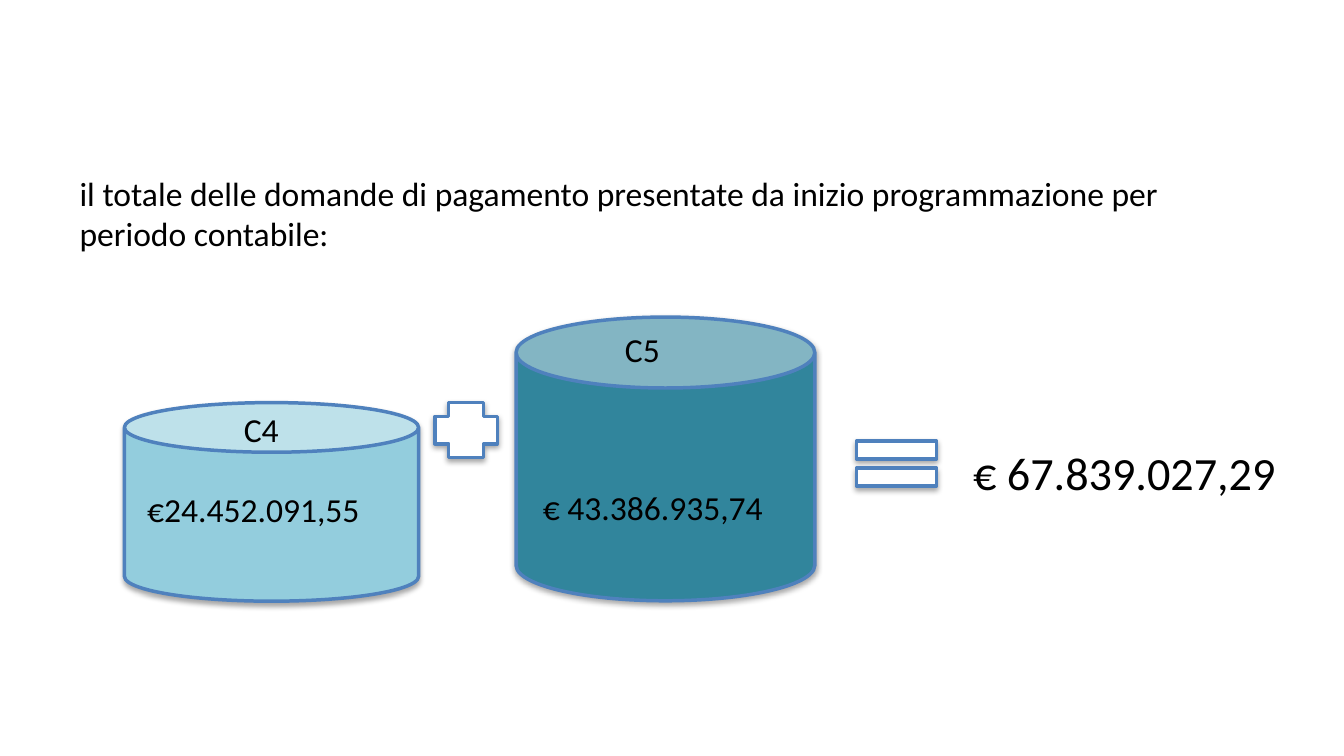
"""Build the slide that adds the C4 and C5 payment claims to their total."""
from lxml import etree
from pptx import Presentation
from pptx import util as u
from pptx.dml.color import RGBColor
from pptx.enum import shapes, text
from pptx.oxml.ns import qn

COLOURS = {"light": "93CDDD", "dark": "31859C", "edge": "4F81BD",
           "white": "FFFFFF", "ink": "000000"}
KINDS = shapes.MSO_SHAPE
PAGE_SIZE = (67.74, 38.1)
INSET = 0.33
EDGE_WIDTH = 5
SHADOW = {"blurRad": u.Pt(8), "dist": u.Pt(4), "dir": 90 * 60000, "rotWithShape": 0}
SHADOW_ALPHA = 35000

FIGURES = [
    (KINDS.CAN, "light", (6.27, 20.29, 14.83, 10.01)),
    (KINDS.CAN, "dark", (26.01, 15.98, 15.06, 14.3)),
    (KINDS.CROSS, "white", (21.92, 20.29, 3.15, 2.77)),
    (KINDS.MATH_EQUAL, "white", (42.44, 21.44, 5.49, 3.84)),
]
LABELS = [
    ("il totale delle domande di pagamento presentate da inizio programmazione "
     "per periodo contabile:", 48, (3.68, 8.36, 59.97, 29.41)),
    ("C4", 48, (11.96, 20.29, 9.17, 2.74)),
    ("€24.452.091,55", 48, (7.09, 24.33, 13.23, 2.74)),
    ("C5", 48, (31.17, 16.23, 9.17, 2.74)),
    ("€ 43.386.935,74", 48, (27.03, 24.23, 13.23, 2.74)),
    ("€ 67.839.027,29", 66, (48.72, 22.07, 16.92, 3.51)),
]


def colour(name):
    return RGBColor.from_string(COLOURS[name])


def apply(target, values):
    for name, value in values.items():
        setattr(target, name, value)


def add_shadow(shape):
    shape.shadow.inherit = False
    effects = shape._element.spPr.find(qn("a:effectLst"))
    shadow = etree.SubElement(effects, qn("a:outerShdw"),
                              {name: str(value) for name, value in SHADOW.items()})
    tint = etree.SubElement(shadow, qn("a:srgbClr"), val=COLOURS["ink"])
    etree.SubElement(tint, qn("a:alpha"), val=str(SHADOW_ALPHA))


def add_figure(page, kind, fill, place):
    shape = page.shapes.add_shape(kind, *map(u.Cm, place))
    shape.fill.solid()
    shape.fill.fore_color.rgb = colour(fill)
    shape.line.color.rgb = colour("edge")
    shape.line.width = u.Pt(EDGE_WIDTH)
    add_shadow(shape)


def add_label(page, words, size, place):
    box = page.shapes.add_textbox(*map(u.Cm, place))
    frame = box.text_frame
    apply(frame, {"word_wrap": True, "vertical_anchor": text.MSO_ANCHOR.TOP})
    apply(frame, {f"margin_{side}": u.Cm(INSET)
                  for side in ("left", "top", "right", "bottom")})
    span = frame.paragraphs[0].add_run()
    span.text = words
    apply(span.font, {"name": "Calibri", "size": u.Pt(size)})
    span.font.color.rgb = colour("ink")


def main():
    deck = Presentation()
    deck.slide_width, deck.slide_height = map(u.Cm, PAGE_SIZE)
    page = deck.slides.add_slide(deck.slide_layouts[6])
    for figure in FIGURES:
        add_figure(page, *figure)
    for label in LABELS:
        add_label(page, *label)
    deck.save("out.pptx")


if __name__ == "__main__":
    main()
